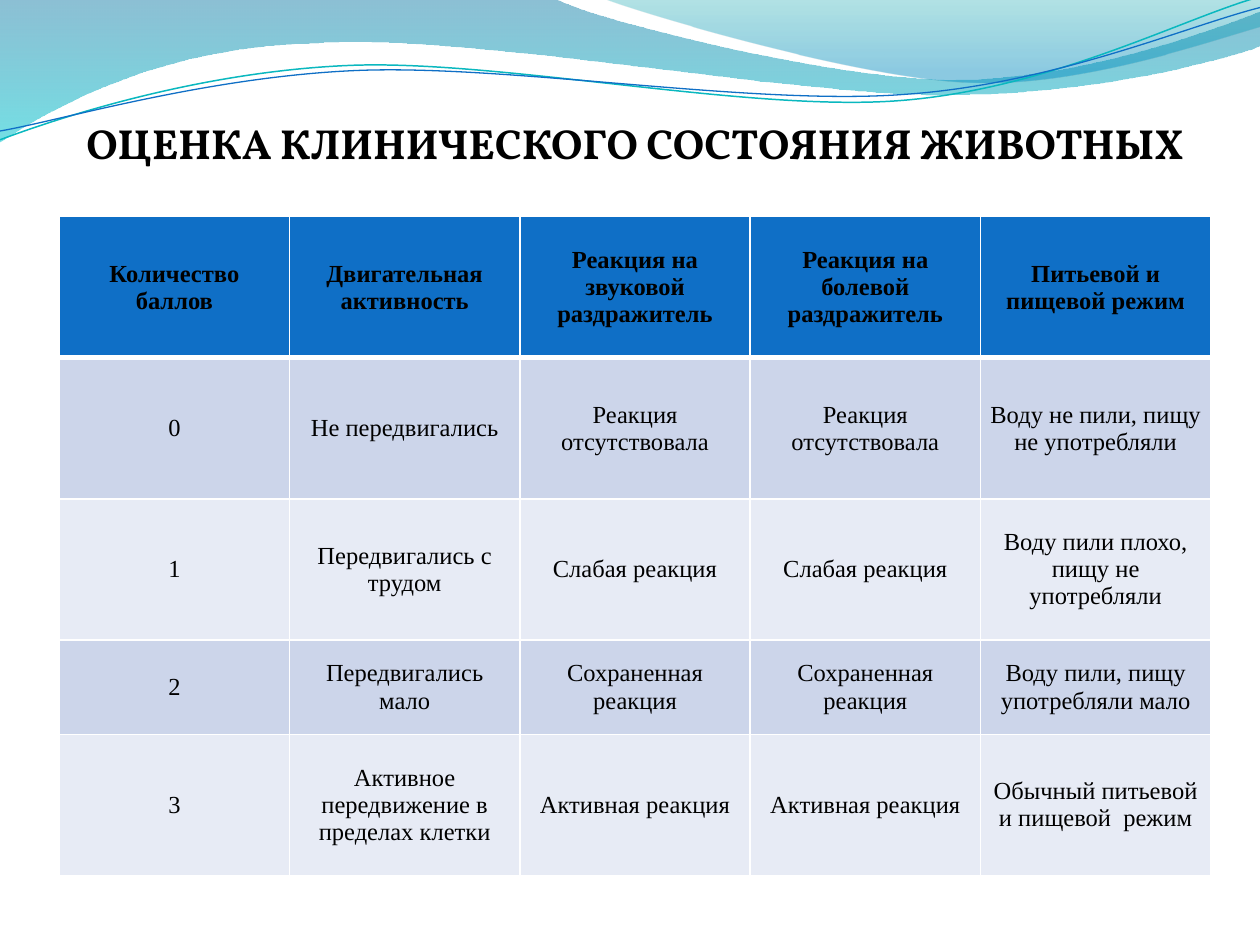
from lxml import etree
from pptx import Presentation
from pptx import util as u
from pptx.dml.color import RGBColor
from pptx.enum import text
from pptx.oxml.ns import qn

BLACK = RGBColor(0, 0, 0)
WHITE = RGBColor(0xFF, 0xFF, 0xFF)
BLUE = RGBColor(0x0F, 0x6F, 0xC6)
TEAL = RGBColor(0x0A, 0xB8, 0xBF)
BANDS = RGBColor(0xCC, 0xD5, 0xEA), RGBColor(0xE7, 0xEB, 0xF5)

TITLE = "ОЦЕНКА КЛИНИЧЕСКОГО СОСТОЯНИЯ ЖИВОТНЫХ"
ROWS = [
    ("Количество баллов", "Двигательная активность", "Реакция на звуковой раздражитель",
     "Реакция на болевой раздражитель", "Питьевой и пищевой режим"),
    ("0", "Не передвигались", "Реакция отсутствовала", "Реакция отсутствовала",
     "Воду не пили, пищу не употребляли"),
    ("1", "Передвигались с трудом", "Слабая реакция", "Слабая реакция",
     "Воду пили плохо, пищу не употребляли"),
    ("2", "Передвигались мало", "Сохраненная реакция", "Сохраненная реакция",
     "Воду пили, пищу употребляли мало"),
    ("3", "Активное передвижение в пределах клетки", "Активная реакция", "Активная реакция",
     "Обычный питьевой и пищевой  режим"),
]
ROW_HEIGHTS = 1.12, 1.12, 1.12, 0.75, 1.12
TABLE_LEFT, TABLE_TOP, TABLE_WIDTH = 0.47, 1.72, 9.14

# Outlines in inches: a pair is a straight step, six numbers are a Bezier curve.
# Gradient stops run top to bottom: position, colour, opacity in percent.
WAVES = [
    ([(0, 0), (4.4, -0.01), (4.76, 0.17, 6.64, 0.63, 7.58, 0.63),
      (8.53, 0.63, 9.58, 0.26, 10, 0.09), (10.01, 0.36),
      (9.83, 0.44, 8.7, 0.76, 7.46, 0.75), (6.22, 0.75, 3.82, 0.28, 2.57, 0.34),
      (1.29, 0.36, 0.46, 0.83, -0.01, 1.13)],
     [(0, RGBColor(0, 0x74, 0xA1), 45), (1, RGBColor(0, 0xC6, 0xCF), 55)]),
    ([(4.79, -0.01), (5.09, 0.11, 6.82, 0.62, 7.69, 0.65),
      (8.56, 0.69, 9.61, 0.32, 10, 0.21), (10, 0)],
     [(0, RGBColor(0, 0xA1, 0xA9), 30), (0.8, RGBColor(0, 0x8B, 0xBF), 45)]),
]
STRANDS = [
    ([(0, 1.11), (0.48, 0.93, 1.58, 0.57, 2.77, 0.52), (3.95, 0.47, 5.93, 0.89, 7.13, 0.8),
      (8.33, 0.71, 9.38, 0.15, 9.98, -0.02)], TEAL, 0.85),
    ([(0, 1.04), (0.47, 0.96, 1.64, 0.61, 2.83, 0.56), (4.03, 0.51, 5.97, 0.84, 7.17, 0.75),
      (8.36, 0.67, 9.41, 0.21, 10, 0.06)], BLUE, 0.75),
]


def add_outline(s, steps, close):
    """Add a freeform through every point, then turn each curve's three lines into a Bezier."""
    points = [(u.Inches(x), u.Inches(y))
              for step in steps for x, y in zip(step[::2], step[1::2])]
    builder = s.shapes.build_freeform(*points[0])
    builder.add_line_segments(points[1:], close=close)
    sp = builder.convert_to_shape()
    sp.shadow.inherit = False
    lines = iter(list(sp.element.spPr.iter(qn("a:lnTo"))))
    for step in steps[1:]:
        line = next(lines)
        if len(step) == 6:
            line.tag = qn("a:cubicBezTo")
            for _ in range(2):
                extra = next(lines)
                line.append(extra[0])
                extra.getparent().remove(extra)
    return sp


def add_wave(s, steps, stops):
    sp = add_outline(s, steps, close=True)
    sp.line.fill.background()
    sp.fill.gradient()
    sp.fill.gradient_angle = 270
    for stop, (position, color, _) in zip(sp.fill.gradient_stops, stops):
        stop.position = position
        stop.color.rgb = color
    for clr, (_, _, opacity) in zip(sp.element.spPr.iter(qn("a:srgbClr")), stops):
        etree.SubElement(clr, qn("a:alpha")).set("val", str(opacity * 1000))


def add_strand(s, steps, color, width):
    sp = add_outline(s, steps, close=False)
    sp.fill.background()
    sp.line.color.rgb = color
    sp.line.width = u.Pt(width)


def style(p, name, size, bold):
    p.alignment = text.PP_ALIGN.CENTER
    for r in p.runs:
        r.font.name, r.font.size, r.font.bold = name, u.Pt(size), bold
        r.font.color.rgb = BLACK


def set_title(s):
    sp = s.shapes.title
    sp.left, sp.top, sp.width, sp.height = map(u.Inches, (0.55, 0.77, 8.98, 0.56))
    tf = sp.text_frame
    tf.text = TITLE
    tf.word_wrap = True
    tf.auto_size = text.MSO_AUTO_SIZE.NONE
    tf.vertical_anchor = text.MSO_ANCHOR.BOTTOM
    tf.margin_left = tf.margin_right = tf.margin_bottom = 0
    tf.margin_top = u.Inches(0.05)
    style(tf.paragraphs[0], "Vollkorn", 24, True)


def set_borders(cell, **widths):
    """Draw white borders; sides are given in the order l, r, t, b, widths in points."""
    tc_pr = cell._tc.get_or_add_tcPr()
    for i, (side, width) in enumerate(widths.items()):
        ln = etree.Element(qn("a:ln" + side.upper()), w=str(u.Pt(width)))
        fill = etree.SubElement(ln, qn("a:solidFill"))
        etree.SubElement(fill, qn("a:srgbClr"), val=str(WHITE))
        tc_pr.insert(i, ln)


def add_scores(s):
    table = s.shapes.add_table(
        len(ROWS), len(ROWS[0]), u.Inches(TABLE_LEFT), u.Inches(TABLE_TOP),
        u.Inches(TABLE_WIDTH), u.Inches(sum(ROW_HEIGHTS))).table
    for i, (row, height) in enumerate(zip(ROWS, ROW_HEIGHTS)):
        table.rows[i].height = u.Inches(height)
        for j, words in enumerate(row):
            cell = table.cell(i, j)
            cell.text = words
            cell.vertical_anchor = text.MSO_ANCHOR.MIDDLE
            cell.margin_left = cell.margin_right = u.Inches(0.07)
            cell.margin_top = cell.margin_bottom = 0
            cell.fill.solid()
            cell.fill.fore_color.rgb = BANDS[(i - 1) % 2] if i else BLUE
            set_borders(cell, l=1, r=1, t=3 if i == 1 else 1, b=1 if i else 3)
            style(cell.text_frame.paragraphs[0], "Times New Roman", 14, i == 0)


def main():
    prs = Presentation()
    prs.slide_width, prs.slide_height = u.Inches(10), u.Inches(7.5)
    s = prs.slides.add_slide(prs.slide_layouts[5])
    for wave in WAVES:
        add_wave(s, *wave)
    for strand in STRANDS:
        add_strand(s, *strand)
    set_title(s)
    add_scores(s)
    prs.save("out.pptx")


if __name__ == "__main__":
    main()
